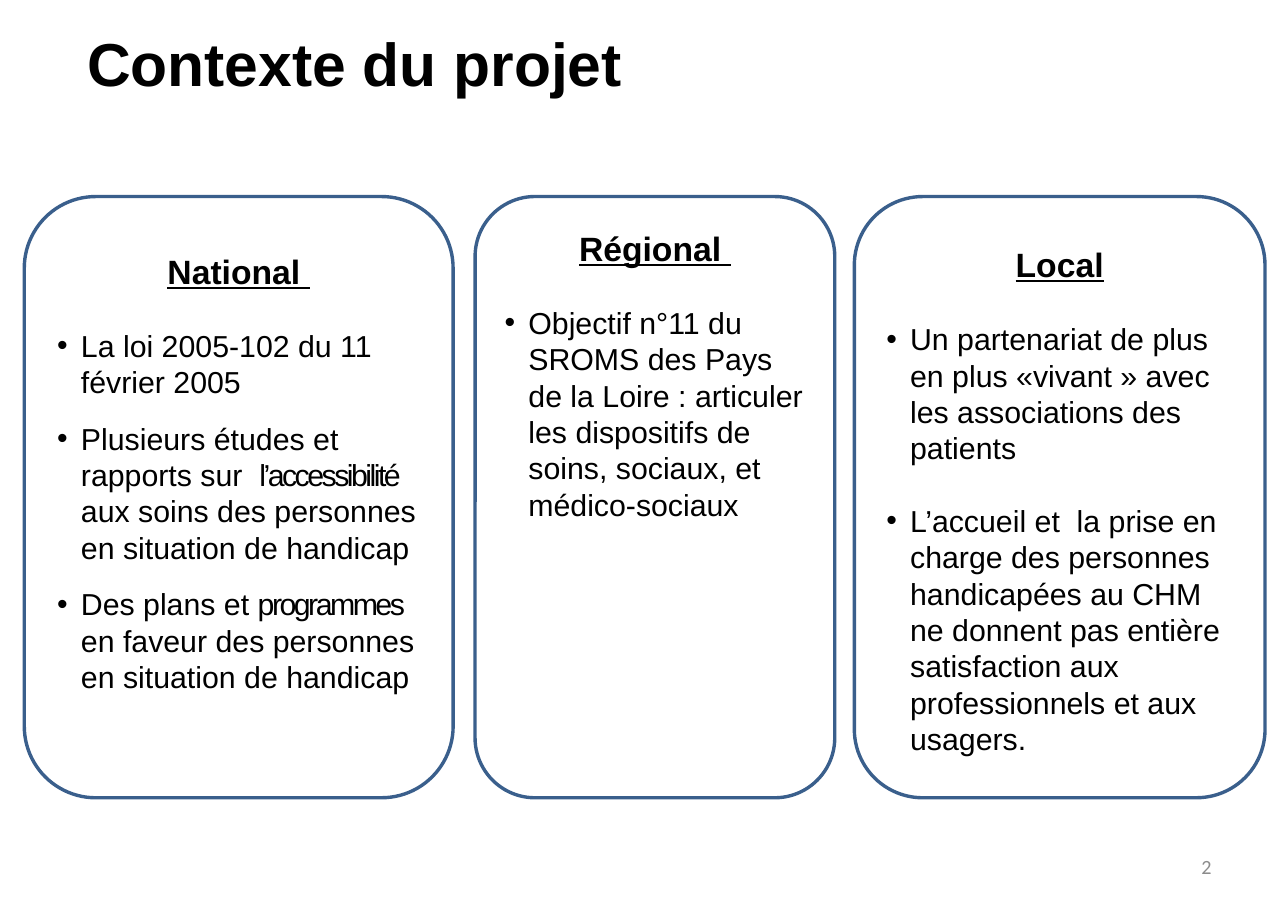
from pptx import Presentation
from pptx.dml.color import RGBColor
from pptx.enum.shapes import MSO_SHAPE
from pptx.enum.text import MSO_ANCHOR, PP_ALIGN
from pptx.oxml.ns import qn
from pptx.util import Cm, Pt
from lxml import etree

BLACK = RGBColor(0x00, 0x00, 0x00)
GREY = RGBColor(0x8C, 0x8C, 0x8C)
BLUE = RGBColor(0x3A, 0x5F, 0x8C)

CARD_TOP, CARD_HEIGHT = Cm(4.12), Cm(12.6)

# Each bullet is a list of (text, character spacing in hundredths of a point).
# heading, left, width, top inset, space between bullets, bullets
CARDS = [
    ("National ", Cm(0.51), Cm(8.99), Cm(0.69), Pt(12), [
        [("La loi 2005-102 du 11 février 2005", 0)],
        [("Plusieurs études et rapports sur  ", 0), ("l’accessibilité ", -150),
         ("aux soins des personnes en situation de handicap", 0)],
        [("Des plans et ", 0), ("programmes", -150),
         (" en faveur des personnes en situation de handicap", 0)],
    ]),
    ("Régional ", Cm(9.96), Cm(7.54), Cm(0.28), Pt(6), [
        [("Objectif n°11 du SROMS des Pays de la Loire : articuler les "
          "dispositifs de soins, sociaux, et médico-sociaux", 0)],
    ]),
    ("Local", Cm(17.91), Cm(8.61), Cm(0.57), Pt(21.6), [
        [("Un partenariat de plus en plus «vivant » avec les associations "
          "des patients", 0)],
        [("L’accueil et  la prise en charge des personnes handicapées au "
          "CHM ne donnent pas entière satisfaction aux professionnels et aux "
          "usagers.", 0)],
    ]),
]


def set_font(paragraph, name, size, color, bold=False):
    font = paragraph.font
    font.name, font.size, font.bold = name, Pt(size), bold
    font.color.rgb = color


def add_bullet(paragraph, indent):
    properties = paragraph._p.get_or_add_pPr()
    properties.set("marL", str(indent))
    properties.set("indent", str(-indent))
    etree.SubElement(properties, qn("a:buFont"), typeface="Arial")
    etree.SubElement(properties, qn("a:buChar"), char="•")


presentation = Presentation()
presentation.slide_width, presentation.slide_height = Cm(27), Cm(19.05)
slide = presentation.slides.add_slide(presentation.slide_layouts[5])

title = slide.shapes.title
title.left, title.top, title.width, title.height = Cm(1.57), Cm(-0.28), Cm(24.31), Cm(3.18)
title.text_frame.text = "Contexte du projet"
title.text_frame.vertical_anchor = MSO_ANCHOR.MIDDLE
title_paragraph = title.text_frame.paragraphs[0]
title_paragraph.alignment = PP_ALIGN.LEFT
set_font(title_paragraph, "Arial", 36, BLACK, bold=True)

for heading, left, width, top_inset, bullet_gap, bullets in CARDS:
    card = slide.shapes.add_shape(
        MSO_SHAPE.ROUNDED_RECTANGLE, left, CARD_TOP, width, CARD_HEIGHT)
    card.shadow.inherit = False
    card.fill.background()
    card.line.color.rgb = BLUE
    card.line.width = Pt(2)

    text_frame = card.text_frame
    text_frame.word_wrap = True
    text_frame.vertical_anchor = MSO_ANCHOR.TOP
    text_frame.margin_top = top_inset

    heading_paragraph = text_frame.paragraphs[0]
    heading_paragraph.text = heading
    heading_paragraph.alignment = PP_ALIGN.CENTER
    heading_paragraph.space_after = Pt(21.5)
    set_font(heading_paragraph, "Arial", 20, BLACK, bold=True)
    heading_paragraph.font.underline = True

    for runs in bullets:
        paragraph = text_frame.add_paragraph()
        paragraph.alignment = PP_ALIGN.LEFT
        paragraph.line_spacing = Pt(21.6)
        paragraph.space_after = bullet_gap
        add_bullet(paragraph, Cm(0.5))
        set_font(paragraph, "Arial", 18, BLACK)
        for text, spacing in runs:
            run = paragraph.add_run()
            run.text = text
            if spacing:
                run.font._element.set("spc", str(spacing))

number_box = slide.shapes.add_textbox(Cm(19.35), Cm(17.65), Cm(6.3), Cm(1.02))
number_box.text_frame.word_wrap = True
number_box.text_frame.vertical_anchor = MSO_ANCHOR.MIDDLE
number_paragraph = number_box.text_frame.paragraphs[0]
number_paragraph.text = "2"
number_paragraph.alignment = PP_ALIGN.RIGHT
set_font(number_paragraph, "Calibri", 12, GREY)

presentation.save("out.pptx")
